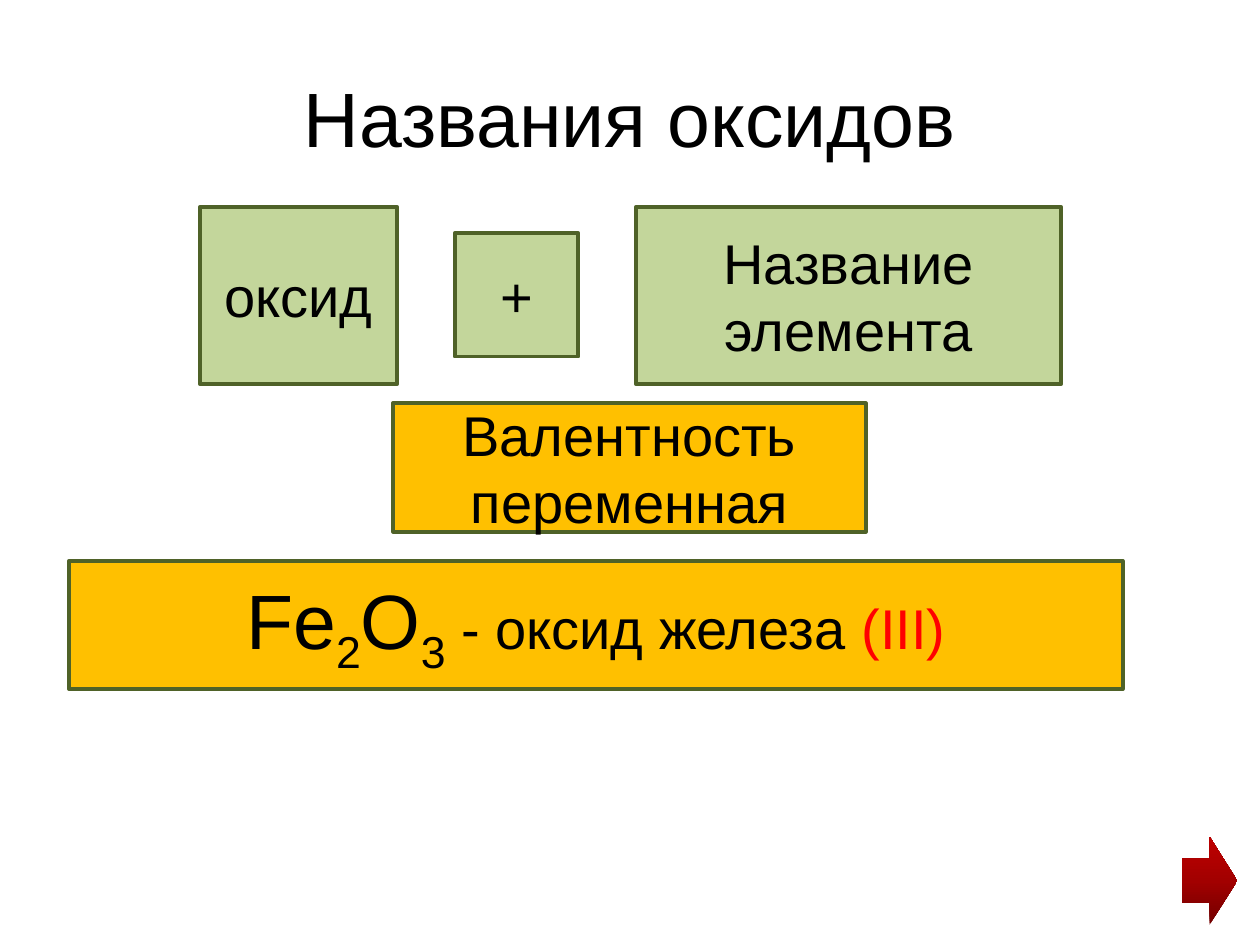
from copy import deepcopy
from dataclasses import dataclass

from pptx import Presentation
from pptx.dml.color import RGBColor as Color
from pptx.enum.shapes import MSO_SHAPE as Shape
from pptx.enum.text import MSO_ANCHOR as Anchor, PP_ALIGN as Align
from pptx.util import Inches, Pt


@dataclass(frozen=True)
class Theme:
    font: str = "Arial"
    large: int = 44
    medium: int = 32
    border_width: float = 2.25
    text: str = "000000"
    accent: str = "FF0000"
    green: str = "C3D69B"
    amber: str = "FFC000"
    border: str = "4F6228"
    arrow: tuple = ("720000", "A20000", "C00000")


theme = Theme()
COLUMNS, ROWS = 100, 75

presentation = Presentation()
presentation.slide_width, presentation.slide_height = Inches(10), Inches(7.5)
slide = presentation.slides.add_slide(presentation.slide_layouts[6])


def grid_box(column, row, columns, rows):
    """Turn grid cells into left, top, width and height."""
    cell_width = presentation.slide_width / COLUMNS
    cell_height = presentation.slide_height / ROWS
    return (round(column * cell_width), round(row * cell_height),
            round(columns * cell_width), round(rows * cell_height))


def write(shape, pieces):
    """Centre pieces of (text, size, colour, baseline percent) in the shape."""
    frame = shape.text_frame
    frame.word_wrap = True
    frame.vertical_anchor = Anchor.MIDDLE
    paragraph = frame.paragraphs[0]
    paragraph.alignment = Align.CENTER
    for text, size, color, baseline in pieces:
        run = paragraph.add_run()
        run.text = text
        run.font.name = theme.font
        run.font.size = Pt(size)
        run.font.color.rgb = Color.from_string(color)
        if baseline:
            run.font._element.set("baseline", str(baseline * 1000))


title = slide.shapes.add_textbox(*grid_box(5, 3, 90, 12.5))
write(title, [("Названия оксидов", theme.large, theme.text, 0)])

formula = [
    ("Fe", theme.large, theme.text, 0),
    ("2", theme.large, theme.text, -25),
    ("O", theme.large, theme.text, 0),
    ("3", theme.large, theme.text, -25),
    (" - оксид железа ", theme.medium, theme.text, 0),
    ("(III)", theme.medium, theme.accent, 0),
]
oxide, plus, element, valence = (
    [(text, theme.medium, theme.text, 0)]
    for text in ("оксид", "+", "Название элемента", "Валентность переменная")
)
boxes = [
    ((15.9, 16.4, 15.6, 14.1), theme.green, oxide),
    ((36.1, 18.5, 9.8, 9.8), theme.green, plus),
    ((50.5, 16.4, 33.7, 14.1), theme.green, element),
    ((31.2, 32, 37.5, 10.2), theme.amber, valence),
    ((5.5, 44.5, 83.6, 10.2), theme.amber, formula),
]
for cells, fill, pieces in boxes:
    box = slide.shapes.add_shape(Shape.RECTANGLE, *grid_box(*cells))
    box.shadow.inherit = False
    box.fill.solid()
    box.fill.fore_color.rgb = Color.from_string(fill)
    box.line.color.rgb = Color.from_string(theme.border)
    box.line.width = Pt(theme.border_width)
    write(box, pieces)

next_arrow = slide.shapes.add_shape(Shape.RIGHT_ARROW, *grid_box(93.8, 66.4, 4.4, 7))
next_arrow.shadow.inherit = False
next_arrow.line.fill.background()
next_arrow.fill.gradient()
next_arrow.fill.gradient_angle = 90
# A new gradient has two stops; a copy of the first makes the third
first_stop = next_arrow._element.spPr.xpath("./a:gradFill/a:gsLst/a:gs")[0]
first_stop.addnext(deepcopy(first_stop))
stops = next_arrow.fill.gradient_stops
for stop, position, color in zip(stops, (0, 0.5, 1), theme.arrow):
    stop.position = position
    stop.color.rgb = Color.from_string(color)

presentation.save("out.pptx")
